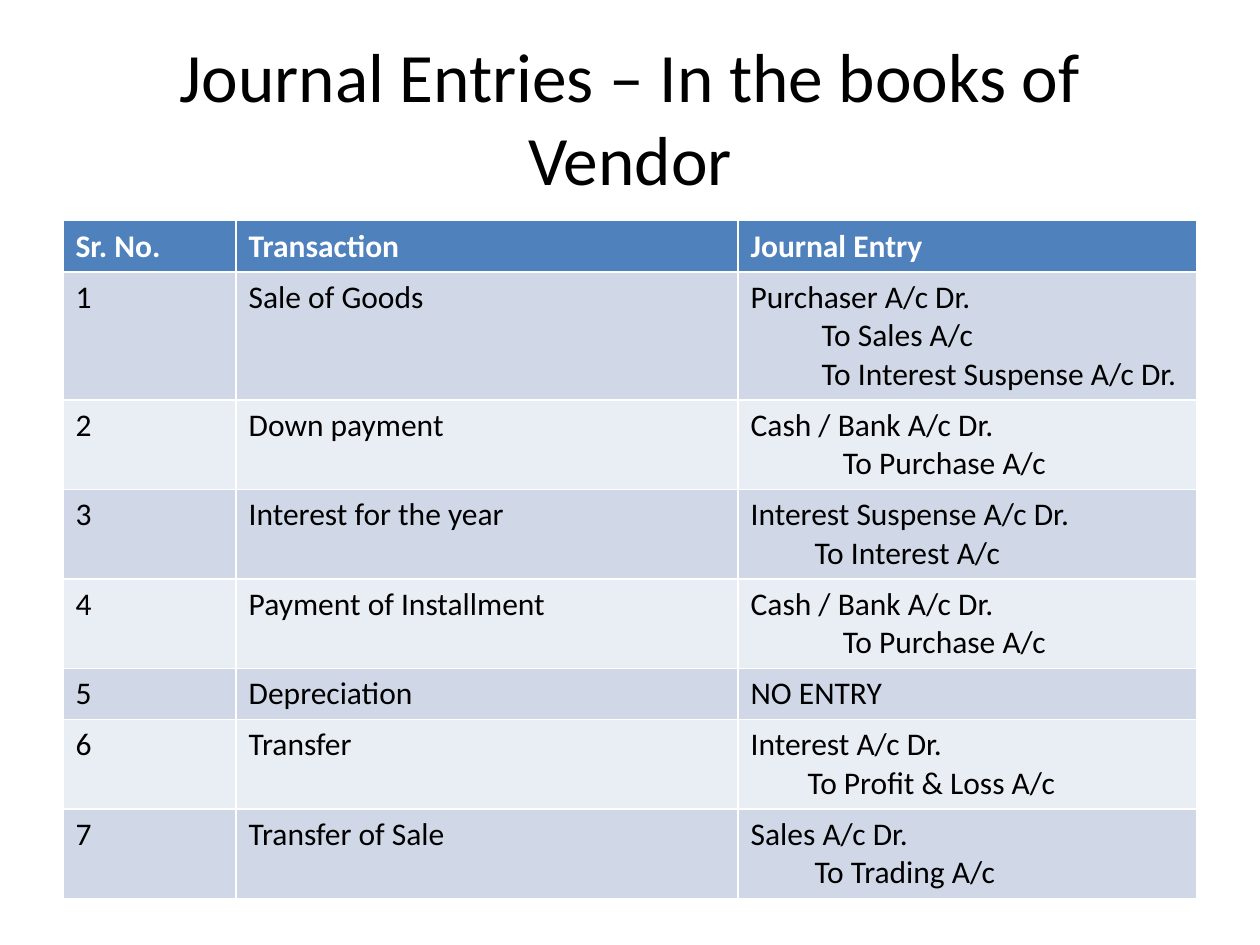
from pptx import Presentation
from pptx.dml.color import RGBColor
from pptx.enum.text import MSO_ANCHOR, PP_ALIGN
from pptx.util import Cm, Pt

CENTER = PP_ALIGN.CENTER
MIDDLE = MSO_ANCHOR.MIDDLE
BLACK = RGBColor(0x00, 0x00, 0x00)
WHITE = RGBColor(0xFF, 0xFF, 0xFF)
HEADER_BLUE = RGBColor(0x4F, 0x81, 0xBD)
BAND_DARK = RGBColor(0xD0, 0xD8, 0xE8)
BAND_LIGHT = RGBColor(0xE9, 0xED, 0xF4)

TITLE_FORMAT = {"name": "Calibri", "size": Pt(39.6)}
HEADER_FORMAT = {"name": "Calibri", "size": Pt(18), "bold": True}
BODY_FORMAT = {"name": "Calibri", "size": Pt(18), "bold": False}

HEADINGS = ("Sr. No.", "Transaction", "Journal Entry")
# Transaction, debit line, credit lines, indent of the credit lines in cm
ENTRIES = [
    ("Sale of Goods", "Purchaser A/c Dr.",
     ["To Sales A/c", "To Interest Suspense A/c Dr."], 1.43),
    ("Down payment", "Cash / Bank A/c Dr.", ["To Purchase A/c"], 1.86),
    ("Interest for the year", "Interest Suspense A/c Dr.", ["To Interest A/c"], 1.29),
    ("Payment of Installment", "Cash / Bank A/c Dr.", ["To Purchase A/c"], 1.86),
    ("Depreciation", "NO ENTRY", [], 0),
    ("Transfer", "Interest A/c Dr.", ["To Profit & Loss A/c"], 1.15),
    ("Transfer of Sale", "Sales A/c Dr.", ["To Trading A/c"], 1.29),
]


def format_font(font, values, color):
    for attribute, value in values.items():
        setattr(font, attribute, value)
    font.color.rgb = color


def fill_cell(cell, lines, background, values, color, indent=0):
    """Write the lines, indenting every one after the first by indent cm."""
    cell.fill.solid()
    cell.fill.fore_color.rgb = background
    cell.text = "\n".join(lines)
    for number, paragraph in enumerate(cell.text_frame.paragraphs):
        format_font(paragraph.runs[0].font, values, color)
        if number:
            paragraph._p.get_or_add_pPr().set("marL", str(Cm(indent)))


prs = Presentation()
prs.slide_width, prs.slide_height = Cm(25.4), Cm(19.05)
slide = prs.slides.add_slide(prs.slide_layouts[5])

# Title
title = slide.shapes.title
title.left, title.top, title.width, title.height = Cm(1.27), Cm(0.76), Cm(22.86), Cm(3.18)
title.text_frame.text = "Journal Entries – In the books of Vendor"
title.text_frame.vertical_anchor = MIDDLE
heading = title.text_frame.paragraphs[0]
heading.alignment = CENTER
format_font(heading.runs[0].font, TITLE_FORMAT, BLACK)

# Journal table
row_count = len(ENTRIES) + 1
journal = slide.shapes.add_table(row_count, len(HEADINGS), Cm(1.27), Cm(4.45),
                                 Cm(22.86), Cm(1.03 * row_count)).table
for column, width in zip(journal.columns, (3.49, 10.12, 9.25)):
    column.width = Cm(width)

for col, text in enumerate(HEADINGS):
    fill_cell(journal.cell(0, col), [text], HEADER_BLUE, HEADER_FORMAT, WHITE)

for row, (transaction, debit, credits, indent) in enumerate(ENTRIES, start=1):
    band = BAND_DARK if row % 2 else BAND_LIGHT
    for col, lines in enumerate(([str(row)], [transaction], [debit, *credits])):
        fill_cell(journal.cell(row, col), lines, band, BODY_FORMAT, BLACK, indent)

prs.save("out.pptx")
